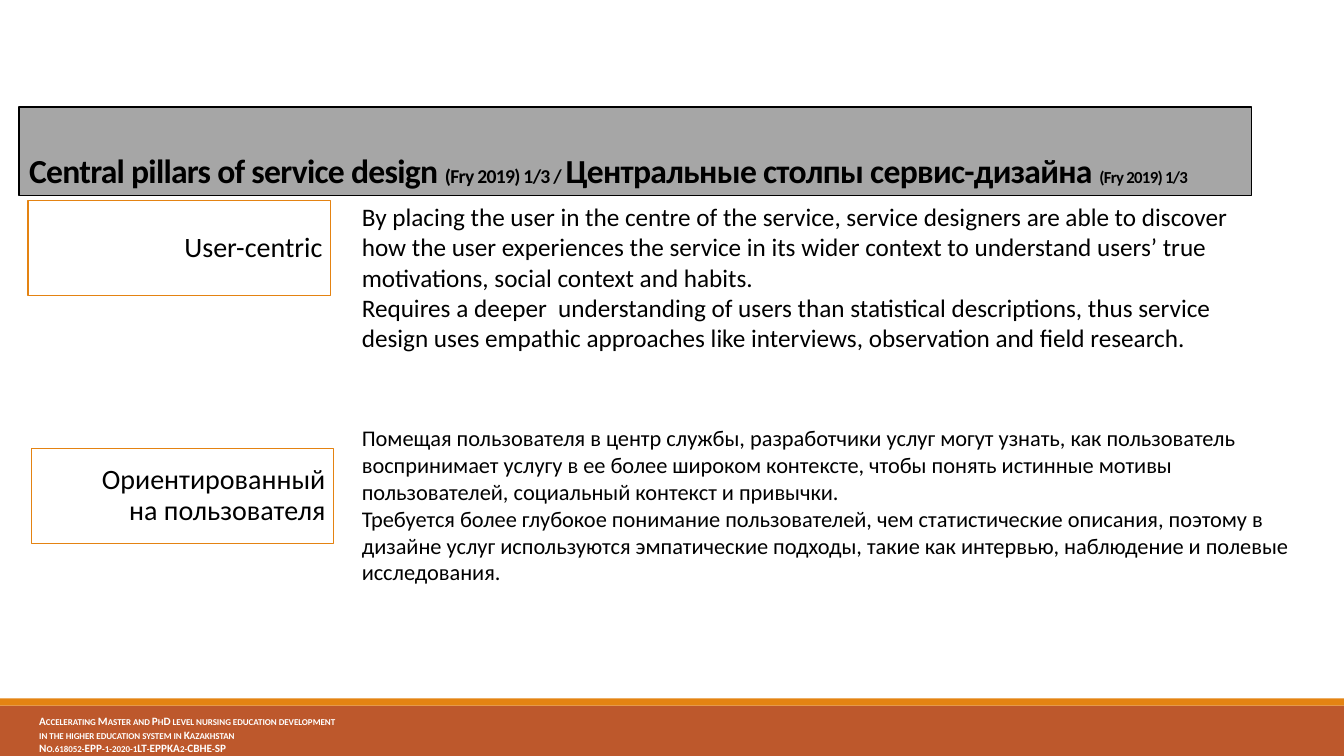
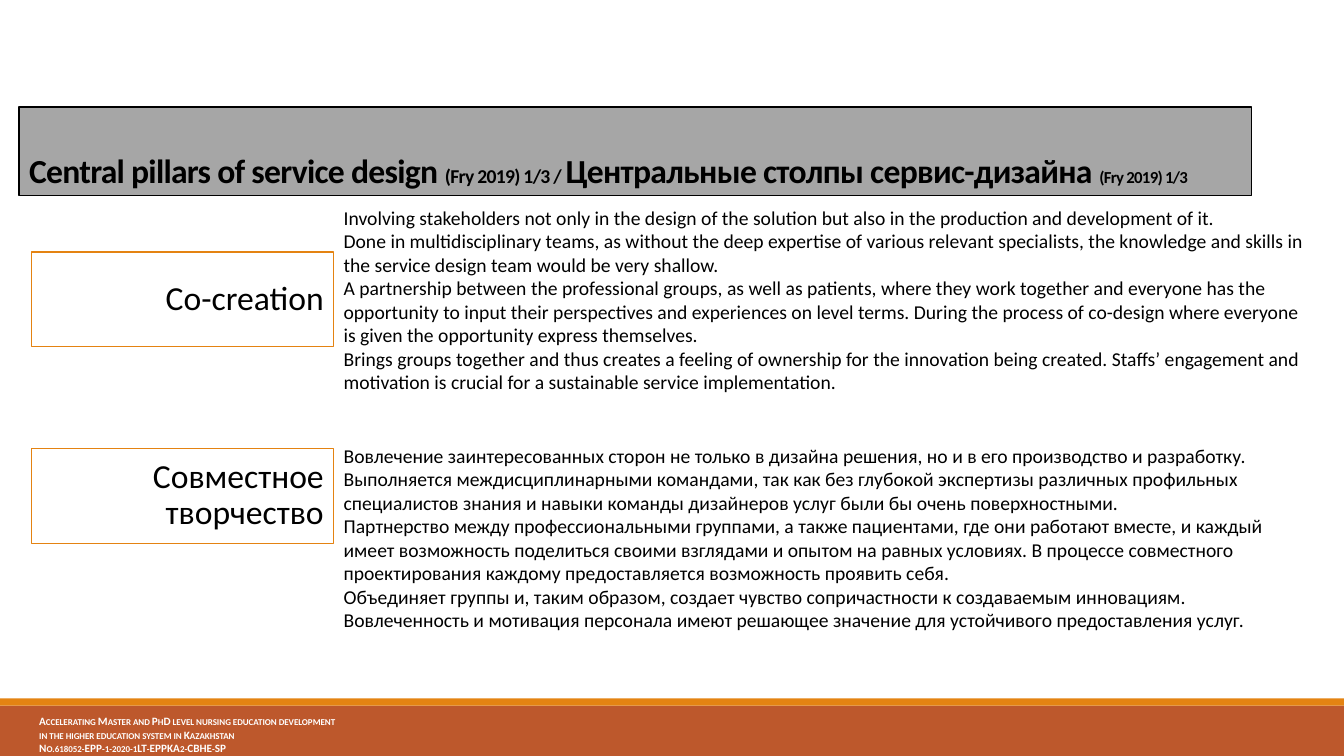
from lxml.etree import SubElement
from pptx import Presentation
from pptx.dml.color import RGBColor
from pptx.enum.shapes import MSO_SHAPE
from pptx.enum.text import MSO_ANCHOR, PP_ALIGN
from pptx.oxml.ns import qn
from pptx.util import Emu, Pt

COLOURS = {"rust": "BD582C", "orange": "E48312", "grey": "A6A6A6", "white": "FFFFFF", "black": "000000"}
FONT = "Calibri"
SCALE = 9144
PAGE_WIDTH, PAGE_HEIGHT = 1333, 750

BANDS = [("rust", (0, 700, PAGE_WIDTH, 50)), ("orange", (0, 693, PAGE_WIDTH, 7))]
FOOTER_AREA = (29, 704, 459, 46)
FOOTER = [
    "Accelerating Master and PhD level nursing education development",
    "in the higher education system in Kazakhstan",
    "No.618052-EPP-1-2020-1LT-EPPKA2-CBHE-SP",
]
TITLE_AREA = (19, 106, 1222, 88)
TITLE = [
    ("Central pillars of service design ", 24),
    ("(Fry 2019) 1/3 / ", 14),
    ("Центральные столпы сервис-дизайна ", 24),
    ("(Fry 2019) 1/3", 12),
]
LABEL_SIZE = (300, 94)

SLIDES = [
    {
        "label_size": 20,
        "label_inset": 8,
        "labels": [("User-centric", (28, 199)), ("Ориентированный на пользователя", (31, 445))],
        "texts": [
            ((349, 195, 909, 164), 18, [
                "By placing the user in the centre of the service, service designers are able to discover how the user experiences the service in its wider context to understand users’ true motivations, social context and habits.",
                "Requires a deeper  understanding of users than statistical descriptions, thus service design uses empathic approaches like interviews, observation and field research.",
            ]),
            ((349, 416, 965, 172), 16, [
                "Помещая пользователя в центр службы, разработчики услуг могут узнать, как пользователь воспринимает услугу в ее более широком контексте, чтобы понять истинные мотивы пользователей, социальный контекст и привычки.",
                "Требуется более глубокое понимание пользователей, чем статистические описания, поэтому в дизайне услуг используются эмпатические подходы, такие как интервью, наблюдение и полевые исследования.",
            ]),
        ],
    },
    {
        "label_size": 24,
        "label_inset": 10,
        "labels": [("Co-creation", (31, 250)), ("Совместное творчество", (31, 445))],
        "texts": [
            ((331, 199, 984, 199), 14, [
                "Involving stakeholders not only in the design of the solution but also in the production and development of it.",
                "Done in multidisciplinary teams, as without the deep expertise of various relevant specialists, the knowledge and skills in the service design team would be very shallow.",
                "A partnership between the professional groups, as well as patients, where they work together and everyone has the opportunity to input their perspectives and experiences on level terms. During the process of co-design where everyone is given the opportunity express themselves.",
                "Brings groups together and thus creates a feeling of ownership for the innovation being created. Staffs’ engagement and motivation is crucial for a sustainable service implementation.",
            ]),
            ((331, 435, 984, 199), 14, [
                "Вовлечение заинтересованных сторон не только в дизайна решения, но и в его производство и разработку.",
                "Выполняется междисциплинарными командами, так как без глубокой экспертизы различных профильных специалистов знания и навыки команды дизайнеров услуг были бы очень поверхностными.",
                "Партнерство между профессиональными группами, а также пациентами, где они работают вместе, и каждый имеет возможность поделиться своими взглядами и опытом на равных условиях. В процессе совместного проектирования каждому предоставляется возможность проявить себя.",
                "Объединяет группы и, таким образом, создает чувство сопричастности к создаваемым инновациям. Вовлеченность и мотивация персонала имеют решающее значение для устойчивого предоставления услуг.",
            ]),
        ],
    },
]


def px(value):
    return Emu(value * SCALE)


def colour(name):
    return RGBColor.from_string(COLOURS[name])


def apply(target, values):
    for name, value in values.items():
        setattr(target, name, value)


def add_box(page, area, fill, line=None, alpha=None):
    box = page.shapes.add_shape(MSO_SHAPE.RECTANGLE, *map(px, area))
    box.shadow.inherit = False
    box.fill.solid()
    box.fill.fore_color.rgb = colour(fill)
    if alpha:
        shade = box.fill._xPr.find(qn("a:solidFill"))[0]
        SubElement(shade, qn("a:alpha"), val=str(alpha * 1000))
    if line:
        box.line.color.rgb = colour(line)
        box.line.width = Pt(1)
    else:
        box.line.fill.background()
    return box


def write(box, paragraphs, frame=None, layout=None, font=None, ink="black", extras=None):
    text = box.text_frame
    apply(text, {"word_wrap": True, "vertical_anchor": MSO_ANCHOR.TOP, **(frame or {})})
    for index, runs in enumerate(paragraphs):
        para = text.add_paragraph() if index else text.paragraphs[0]
        apply(para, {"alignment": PP_ALIGN.LEFT, **(layout or {})})
        for words, size in runs:
            span = para.add_run()
            span.text = words
            apply(span.font, {"name": FONT, "size": Pt(size), **(font or {})})
            span.font.color.rgb = colour(ink)
            for name, value in (extras or {}).items():
                span._r.get_or_add_rPr().set(name, value)


def add_text(page, area, lines, size, **style):
    box = page.shapes.add_textbox(*map(px, area))
    write(box, [[(line, size)] for line in lines], **style)


def add_frame(page):
    for fill, area in BANDS:
        add_box(page, area, fill)
    add_text(page, FOOTER_AREA, FOOTER, 8, frame={"margin_bottom": 0},
             font={"bold": True}, ink="white", extras={"cap": "small"})
    title = add_box(page, TITLE_AREA, "grey", "black")
    write(title, [TITLE], frame={"vertical_anchor": MSO_ANCHOR.BOTTOM},
          layout={"line_spacing": 0.85}, font={"bold": True}, extras={"spc": "-50"})


def add_label(page, words, position, size, inset):
    box = add_box(page, position + LABEL_SIZE, "white", "orange", alpha=40)
    margins = {f"margin_{side}": px(inset) for side in ("top", "right", "bottom")}
    write(box, [[(words, size)]],
          frame={"vertical_anchor": MSO_ANCHOR.MIDDLE, "margin_left": px(63), **margins},
          layout={"alignment": PP_ALIGN.RIGHT, "line_spacing": 0.9})


def main():
    deck = Presentation()
    apply(deck, {"slide_width": px(PAGE_WIDTH), "slide_height": px(PAGE_HEIGHT)})
    for content in SLIDES:
        page = deck.slides.add_slide(deck.slide_layouts[6])
        add_frame(page)
        for words, position in content["labels"]:
            add_label(page, words, position, content["label_size"], content["label_inset"])
        for area, size, lines in content["texts"]:
            add_text(page, area, lines, size)
    deck.save("out.pptx")


if __name__ == "__main__":
    main()
